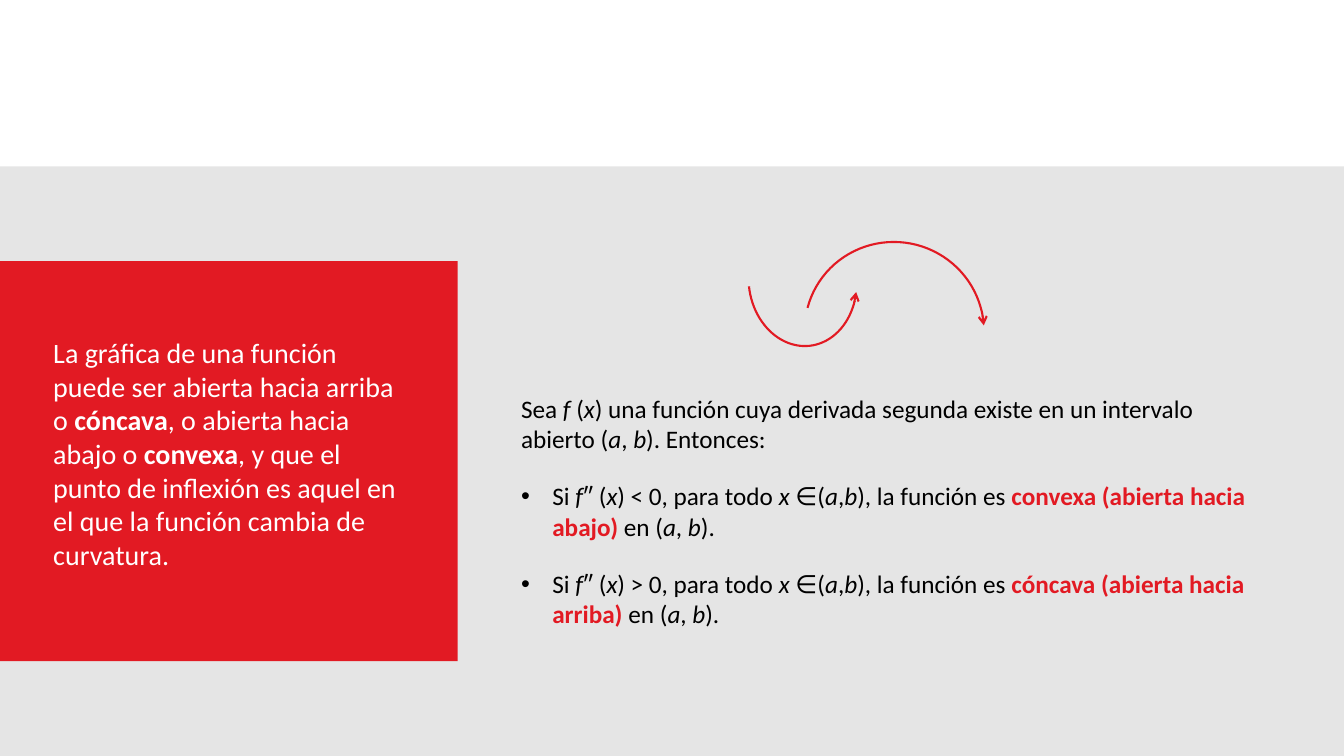
import pptx
import pptx.dml.color
import pptx.enum.shapes
import pptx.enum.text
import pptx.util
from lxml import etree
from pptx.oxml.ns import qn

Inches = pptx.util.Inches
SHAPE = pptx.enum.shapes.MSO_SHAPE
COLORS = {"grey": "E5E5E5", "red": "E21A23", "white": "FFFFFF", "black": "000000"}
FONT = "Calibri"


def rgb(name):
    return pptx.dml.color.RGBColor.from_string(COLORS[name])


def add_band(slide, x, y, w, h, color):
    sp = slide.shapes.add_shape(SHAPE.RECTANGLE, Inches(x), Inches(y), Inches(w), Inches(h))
    sp.shadow.inherit = False
    sp.fill.solid()
    sp.fill.fore_color.rgb = rgb(color)
    sp.line.fill.background()


def add_arc_arrow(slide, x, y, w, h, rotation, flip=False):
    sp = slide.shapes.add_shape(SHAPE.ARC, Inches(x), Inches(y), Inches(w), Inches(h))
    sp.shadow.inherit = False
    sp.rotation = rotation
    sp.adjustments[0] = 162
    sp.adjustments[1] = 43.133
    sp.fill.background()
    sp.line.color.rgb = rgb("red")
    sp.line.width = pptx.util.Pt(1.5)
    if flip:
        sp._element.spPr.find(qn("a:xfrm")).set("flipV", "1")
    ln = sp._element.spPr.find(qn("a:ln"))
    etree.SubElement(ln, qn("a:tailEnd"), type="arrow")


def add_bullet(p):
    pPr = p._p.get_or_add_pPr()
    pPr.set("marL", str(Inches(0.31)))
    pPr.set("indent", str(Inches(-0.31)))
    etree.SubElement(pPr, qn("a:buFont"), typeface="Arial")
    etree.SubElement(pPr, qn("a:buChar"), char="•")


def add_text(slide, text, x, y, w, h, size=18, color="black", bold_color="red", bullet=False):
    """Write text in which *...* is bold and _..._ is italic."""
    tf = slide.shapes.add_textbox(Inches(x), Inches(y), Inches(w), Inches(h)).text_frame
    tf.word_wrap = True
    tf.auto_size = pptx.enum.text.MSO_AUTO_SIZE.SHAPE_TO_FIT_TEXT
    p = tf.paragraphs[0]
    if bullet:
        add_bullet(p)
    for i, part in enumerate(text.split("*")):
        bold = i % 2 == 1
        for j, piece in enumerate(part.split("_")):
            if not piece:
                continue
            r = p.add_run()
            r.text = piece
            r.font.name = FONT
            r.font.size = pptx.util.Pt(size)
            r.font.bold = bold
            r.font.italic = j % 2 == 1
            r.font.color.rgb = rgb(bold_color if bold else color)


def main():
    prs = pptx.Presentation()
    prs.slide_width, prs.slide_height = Inches(13.33), Inches(7.5)
    slide = prs.slides.add_slide(prs.slide_layouts[6])

    # Background and red panel
    add_band(slide, 0, 1.65, 13.33, 5.85, "grey")
    add_band(slide, 0, 2.59, 4.54, 3.97, "red")
    add_text(slide, "La gráfica de una función puede ser abierta hacia arriba o *cóncava*, "
             "o abierta hacia abajo o *convexa*, y que el punto de inflexión es aquel en "
             "el que la función cambia de curvatura.",
             0.43, 3.28, 3.77, 2.46, size=20, color="white", bold_color="white")

    # Concave and convex curves
    add_arc_arrow(slide, 7.31, 2.25, 1.3, 1.07, 83.9, flip=True)
    add_arc_arrow(slide, 7.99, 2.39, 1.76, 1.78, 284.7)

    # Definition and its two cases
    add_text(slide, "Sea _f _(_x_) una función cuya derivada segunda existe en un "
             "intervalo abierto (_a_, _b_). Entonces:", 5.07, 3.85, 7.43, 0.71)
    cases = [("<", "convexa (abierta hacia abajo)"), (">", "cóncava (abierta hacia arriba)")]
    for i, (sign, shape_name) in enumerate(cases):
        add_text(slide, f"Si _f_″ (_x_) {sign} 0, para todo _x _∈(_a_,_b_), la función es "
                 f"*{shape_name} *en (_a_, _b_).",
                 5.07, 4.72 + 0.87 * i, 7.43, 0.71, bullet=True)

    prs.save("out.pptx")


if __name__ == "__main__":
    main()
